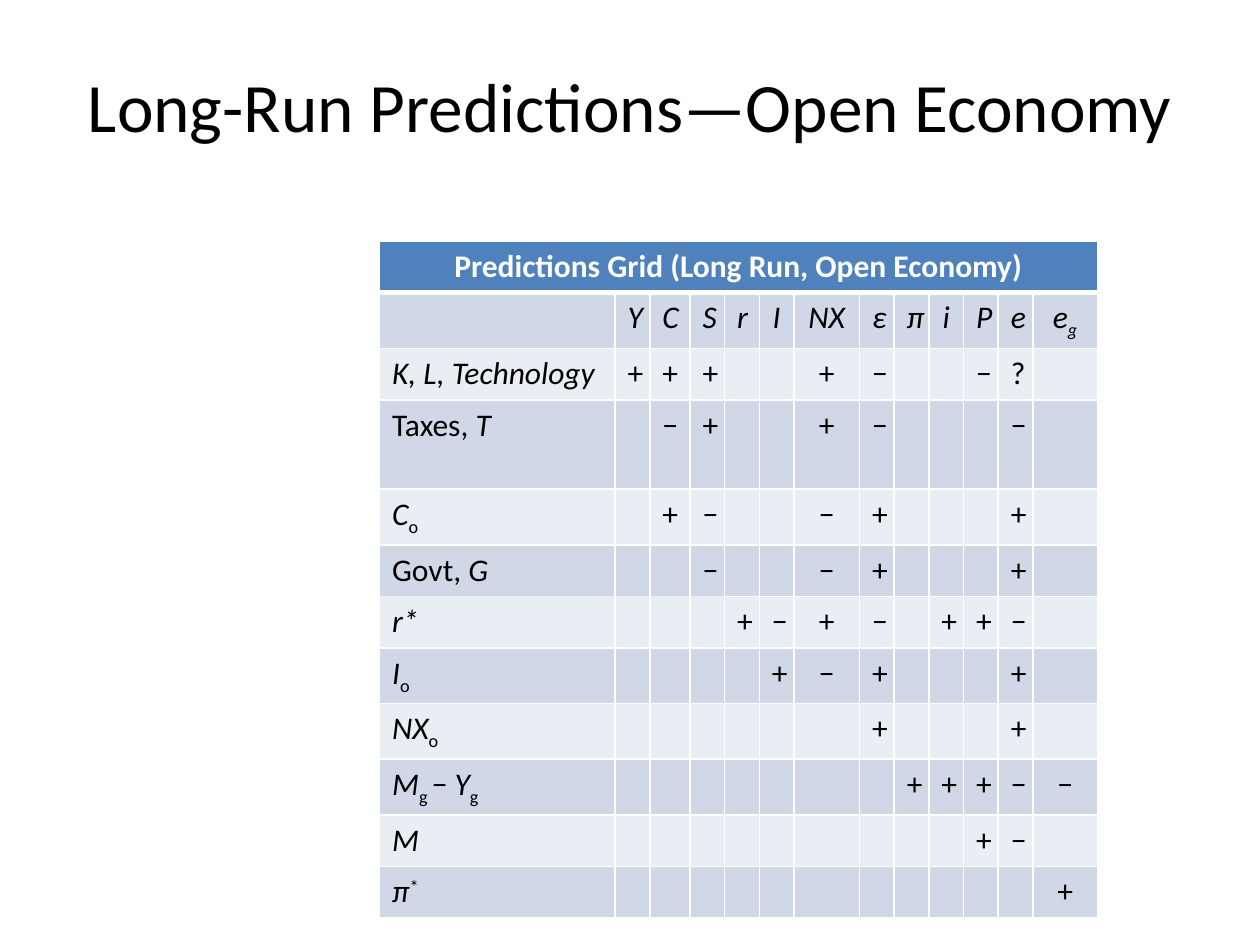
from dataclasses import dataclass
from typing import NamedTuple

from lxml.etree import SubElement
from pptx import Presentation
from pptx.dml.color import RGBColor as Rgb
from pptx.enum.text import MSO_ANCHOR as Anchor, PP_ALIGN as Align
from pptx.oxml.ns import qn
from pptx.util import Cm, Pt

BLACK = Rgb(0x00, 0x00, 0x00)
WHITE = Rgb(0xFF, 0xFF, 0xFF)
BLUE = Rgb(0x4F, 0x81, 0xBD)
DARK = Rgb(0xD0, 0xD8, 0xE8)
LIGHT = Rgb(0xE9, 0xED, 0xF4)
FONT = "Calibri"


class Run(NamedTuple):
    text: str
    italic: bool = False
    base: int = 0  # percent raised (+) or lowered (-)


@dataclass
class Row:
    label: list[Run]
    marks: str  # one sign per variable, a dot for no effect
    high: float = 1.04


def it(text: str) -> Run:
    return Run(text, True)


def sub(text: str, italic: bool = False) -> Run:
    return Run(text, italic, -25)


HEADS = [[it(name)] for name in "Y C S r I NX ε π i P e".split()]
HEADS.append([it("e"), sub("g", True)])
WIDTHS = [4.75, 0.7, 0.81, 0.7, 0.7, 0.7, 1.32, 0.7, 0.7, 0.7, 0.7, 0.7, 1.3]
ROWS = [
    Row([it("K, L, Technology")], "+++..+−..−?."),
    Row([Run("Taxes, "), it("T")], ".−+..+−...−.", 1.8),
    Row([it("C"), sub("o")], ".+−..−+...+."),
    Row([Run("Govt, "), it("G")], "..−..−+...+."),
    Row([it("r*")], "...+−+−.++−."),
    Row([it("I"), sub("o")], "....+−+...+."),
    Row([it("NX"), sub("o")], "......+...+."),
    Row([it("M"), sub("g "), Run("− "), it("Y"), sub("g")], ".......+++−−"),
    Row([it("M")], ".........+−."),
    Row([it("π"), Run("*", base=30)], "...........+"),
]
GOVT, OPEN = 5, 4  # no rule below the Govt row in the first four columns


def write(frame, runs: list[Run], size: float = 18, color: Rgb = BLACK,
          bold: bool = False, align: Align = Align.CENTER) -> None:
    par = frame.paragraphs[0]
    par.alignment = align
    par.font.size = Pt(size)
    for part in runs:
        run = par.add_run()
        run.text = part.text
        font = run.font
        font.name, font.size, font.bold = FONT, Pt(size), bold
        font.italic = part.italic
        font.color.rgb = color
        if part.base:
            run._r.get_or_add_rPr().set("baseline", str(part.base * 1000))


def edge(cell, side: str, width: float) -> None:
    line = SubElement(cell._tc.get_or_add_tcPr(), qn(f"a:ln{side}"),
                      w=str(Pt(width)))
    if width:
        fill = SubElement(line, qn("a:solidFill"))
        SubElement(fill, qn("a:srgbClr"), val=str(WHITE))
    else:
        SubElement(line, qn("a:noFill"))


def paint(cell, row: int, col: int) -> None:
    top = bottom = 1
    if row == 0:
        bottom = 3
    elif row == 1:
        top = 3
    elif col < OPEN and row == GOVT:
        bottom = 0
    elif col < OPEN and row == GOVT + 1:
        top = 0
    for side, width in zip("LRTB", (1, 1, top, bottom)):
        edge(cell, side, width)
    cell.fill.solid()
    cell.fill.fore_color.rgb = BLUE if row == 0 else DARK if row % 2 else LIGHT


def draw_title(slide) -> None:
    box = slide.shapes.add_textbox(Cm(1.27), Cm(0.53), Cm(22.86), Cm(3.18))
    frame = box.text_frame
    frame.word_wrap = True
    frame.vertical_anchor = Anchor.MIDDLE
    write(frame, [Run("Long-Run Predictions—Open Economy")], size=39.6)


def draw_grid(slide) -> None:
    highs = [1.04, 1.04] + [row.high for row in ROWS]
    grid = slide.shapes.add_table(
        len(highs), len(WIDTHS), Cm(7.65), Cm(4.86),
        Cm(sum(WIDTHS)), Cm(sum(highs))).table
    grid.first_row = grid.horz_banding = False
    for col, width in zip(grid.columns, WIDTHS):
        col.width = Cm(width)
    for row, high in zip(grid.rows, highs):
        row.height = Cm(high)
    for r in range(len(highs)):
        for c in range(len(WIDTHS)):
            paint(grid.cell(r, c), r, c)

    # Heading across all columns
    head = grid.cell(0, 0)
    head.merge(grid.cell(0, len(WIDTHS) - 1))
    write(head.text_frame, [Run("Predictions Grid (Long Run, Open Economy)")],
          color=WHITE, bold=True)

    # Variable names, then the sign of each effect
    for c, runs in enumerate(HEADS, 1):
        write(grid.cell(1, c).text_frame, runs)
    for r, row in enumerate(ROWS, 2):
        write(grid.cell(r, 0).text_frame, row.label, align=Align.LEFT)
        for c, mark in enumerate(row.marks, 1):
            if mark != ".":
                write(grid.cell(r, c).text_frame, [Run(mark)])


def main() -> None:
    deck = Presentation()
    deck.slide_width, deck.slide_height = Cm(25.4), Cm(19.05)
    slide = deck.slides.add_slide(deck.slide_layouts[6])
    draw_title(slide)
    draw_grid(slide)
    deck.save("out.pptx")


if __name__ == "__main__":
    main()
